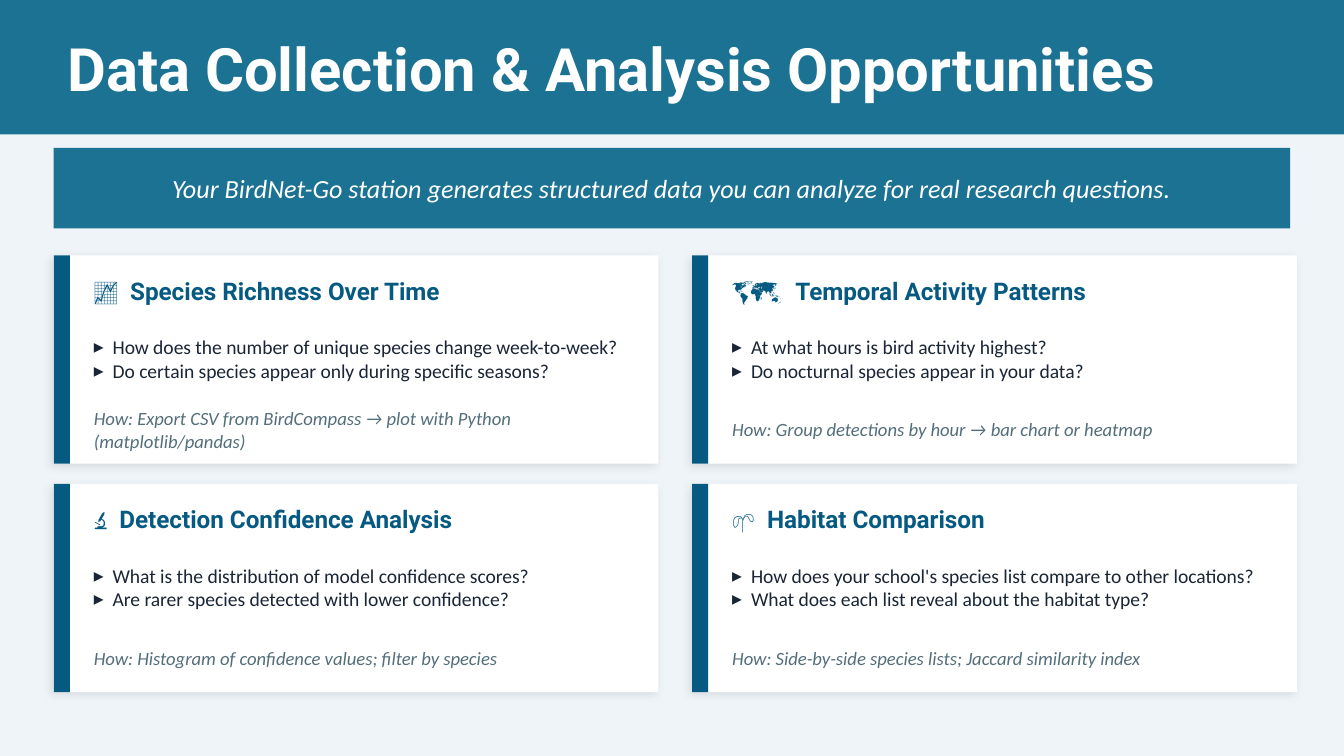
from dataclasses import dataclass

from lxml import etree
from pptx import Presentation
from pptx.dml.color import RGBColor
from pptx.enum.shapes import MSO_SHAPE
from pptx.enum.text import MSO_ANCHOR, MSO_AUTO_SIZE, PP_ALIGN
from pptx.oxml.ns import qn
from pptx.shapes.autoshape import Shape
from pptx.slide import Slide
from pptx.text.text import TextFrame
from pptx.util import Emu, Inches, Pt

RECTANGLE = MSO_SHAPE.RECTANGLE
MIDDLE = MSO_ANCHOR.MIDDLE
NO_AUTOFIT = MSO_AUTO_SIZE.NONE
LEFT, CENTER = PP_ALIGN.LEFT, PP_ALIGN.CENTER


@dataclass(frozen=True)
class TextStyle:
    font: str
    size: float
    color: str
    bold: bool = False
    italic: bool = False


@dataclass(frozen=True)
class Theme:
    page: str = "EEF4F8"
    banner: str = "1C7293"
    card: str = "FFFFFF"
    accent: str = "065A82"
    shadow: str = "000000"
    title: TextStyle = TextStyle("Roboto", 32, "FFFFFF", bold=True)
    intro: TextStyle = TextStyle("Calibri", 14, "FFFFFF", italic=True)
    heading: TextStyle = TextStyle("Roboto", 13, "065A82", bold=True)
    question: TextStyle = TextStyle("Calibri", 10.5, "1A2535")
    method: TextStyle = TextStyle("Calibri", 10, "546E7A", italic=True)


@dataclass(frozen=True)
class Box:
    left: float
    top: float
    width: float
    height: float

    def lengths(self) -> tuple[Emu, ...]:
        return tuple(Inches(v) for v in (self.left, self.top, self.width, self.height))


@dataclass(frozen=True)
class Card:
    icon: str
    heading_indent: float  # inches from the icon's left edge to the heading
    heading: str
    questions: tuple[str, ...]
    method: str


THEME = Theme()
SLIDE_WIDTH = Inches(10)
SLIDE_HEIGHT = SLIDE_WIDTH * 9 // 16
BULLET_INDENT = 0.14
CARD_WIDTH, CARD_HEIGHT = 4.5, 1.55
CARD_LEFT, CARD_TOP = 0.4, 1.9
COLUMN_STEP, ROW_STEP = 4.75, 1.7

CARDS = (
    Card("📈", 0.27, "Species Richness Over Time",
         ("How does the number of unique species change week-to-week?",
          "Do certain species appear only during specific seasons?"),
         "How: Export CSV from BirdCompass → plot with Python (matplotlib/pandas)"),
    Card("🗺️", 0.47, "Temporal Activity Patterns",
         ("At what hours is bird activity highest?",
          "Do nocturnal species appear in your data?"),
         "How: Group detections by hour → bar chart or heatmap"),
    Card("🔬", 0.19, "Detection Confidence Analysis",
         ("What is the distribution of model confidence scores?",
          "Are rarer species detected with lower confidence?"),
         "How: Histogram of confidence values; filter by species"),
    Card("🌱", 0.26, "Habitat Comparison",
         ("How does your school's species list compare to other locations?",
          "What does each list reveal about the habitat type?"),
         "How: Side-by-side species lists; Jaccard similarity index"),
)


def add_panel(slide: Slide, box: Box, color: str) -> Shape:
    panel = slide.shapes.add_shape(RECTANGLE, *box.lengths())
    panel.shadow.inherit = False
    panel.fill.solid()
    panel.fill.fore_color.rgb = RGBColor.from_string(color)
    panel.line.fill.background()
    return panel


def add_soft_shadow(panel: Shape) -> None:
    effects = panel.element.spPr.find(qn("a:effectLst"))
    shadow = etree.SubElement(effects, qn("a:outerShdw"), blurRad=str(Pt(5)),
                              dist=str(Pt(2)), dir=str(135 * 60000),
                              algn="bl", rotWithShape="0")
    color = etree.SubElement(shadow, qn("a:srgbClr"), val=THEME.shadow)
    etree.SubElement(color, qn("a:alpha"), val="9000")


def add_bullet(properties: etree._Element, font: str) -> None:
    indent = Inches(BULLET_INDENT)
    properties.set("marL", str(indent))
    properties.set("indent", str(-indent))
    etree.SubElement(properties, qn("a:buFont"), typeface=font)
    etree.SubElement(properties, qn("a:buChar"), char="▸")


def add_tab_stop(properties: etree._Element, position: float) -> None:
    tabs = etree.SubElement(properties, qn("a:tabLst"))
    etree.SubElement(tabs, qn("a:tab"), pos=str(Inches(position)), algn="l")


def write_text(frame: TextFrame, lines: tuple[str, ...], style: TextStyle,
               align: PP_ALIGN = LEFT, bulleted: bool = False,
               tab_stop: float | None = None) -> None:
    frame.word_wrap = True
    frame.auto_size = NO_AUTOFIT
    frame.vertical_anchor = MIDDLE
    for index, line in enumerate(lines):
        paragraph = frame.add_paragraph() if index else frame.paragraphs[0]
        paragraph.text = line
        paragraph.alignment = align
        properties = paragraph._p.get_or_add_pPr()
        if bulleted:
            add_bullet(properties, style.font)
        if tab_stop is not None:
            add_tab_stop(properties, tab_stop)
        font = paragraph.font
        font.name = style.font
        font.size = Pt(style.size)
        font.bold = style.bold
        font.italic = style.italic
        font.color.rgb = RGBColor.from_string(style.color)


def add_text_frame(slide: Slide, box: Box) -> TextFrame:
    return slide.shapes.add_textbox(*box.lengths()).text_frame


def add_title(slide: Slide, text: str) -> None:
    title = slide.shapes.title
    title.left, title.top, title.width, title.height = Box(0.4, 0, 9.2, 1).lengths()
    write_text(title.text_frame, (text,), THEME.title)
    # The banner belongs behind the title
    banner = add_panel(slide, Box(0, 0, 10, 1), THEME.banner)
    title.element.addprevious(banner.element)


def add_card(slide: Slide, card: Card, left: float, top: float) -> None:
    add_soft_shadow(add_panel(slide, Box(left, top, CARD_WIDTH, CARD_HEIGHT), THEME.card))
    add_panel(slide, Box(left, top, 0.12, CARD_HEIGHT), THEME.accent)

    def text_row(offset: float, height: float) -> TextFrame:
        return add_text_frame(slide, Box(left + 0.2, top + offset, 4.2, height))

    write_text(text_row(0.07, 0.38), (f"{card.icon}\t{card.heading}",),
               THEME.heading, tab_stop=card.heading_indent)
    write_text(text_row(0.47, 0.6), card.questions, THEME.question, bulleted=True)
    write_text(text_row(1.12, 0.35), (card.method,), THEME.method)


def main() -> None:
    presentation = Presentation()
    presentation.slide_width = SLIDE_WIDTH
    presentation.slide_height = SLIDE_HEIGHT
    slide = presentation.slides.add_slide(presentation.slide_layouts[5])
    slide.background.fill.solid()
    slide.background.fill.fore_color.rgb = RGBColor.from_string(THEME.page)

    # Title and introduction
    add_title(slide, "Data Collection & Analysis Opportunities")
    add_panel(slide, Box(0.4, 1.1, 9.2, 0.6), THEME.banner)
    write_text(add_text_frame(slide, Box(0.55, 1.12, 8.9, 0.56)),
               ("Your BirdNet-Go station generates structured data "
                "you can analyze for real research questions.",),
               THEME.intro, CENTER)

    # Research questions in a two-column grid
    for index, card in enumerate(CARDS):
        row, column = divmod(index, 2)
        add_card(slide, card, CARD_LEFT + column * COLUMN_STEP, CARD_TOP + row * ROW_STEP)

    presentation.save("out.pptx")


if __name__ == "__main__":
    main()
